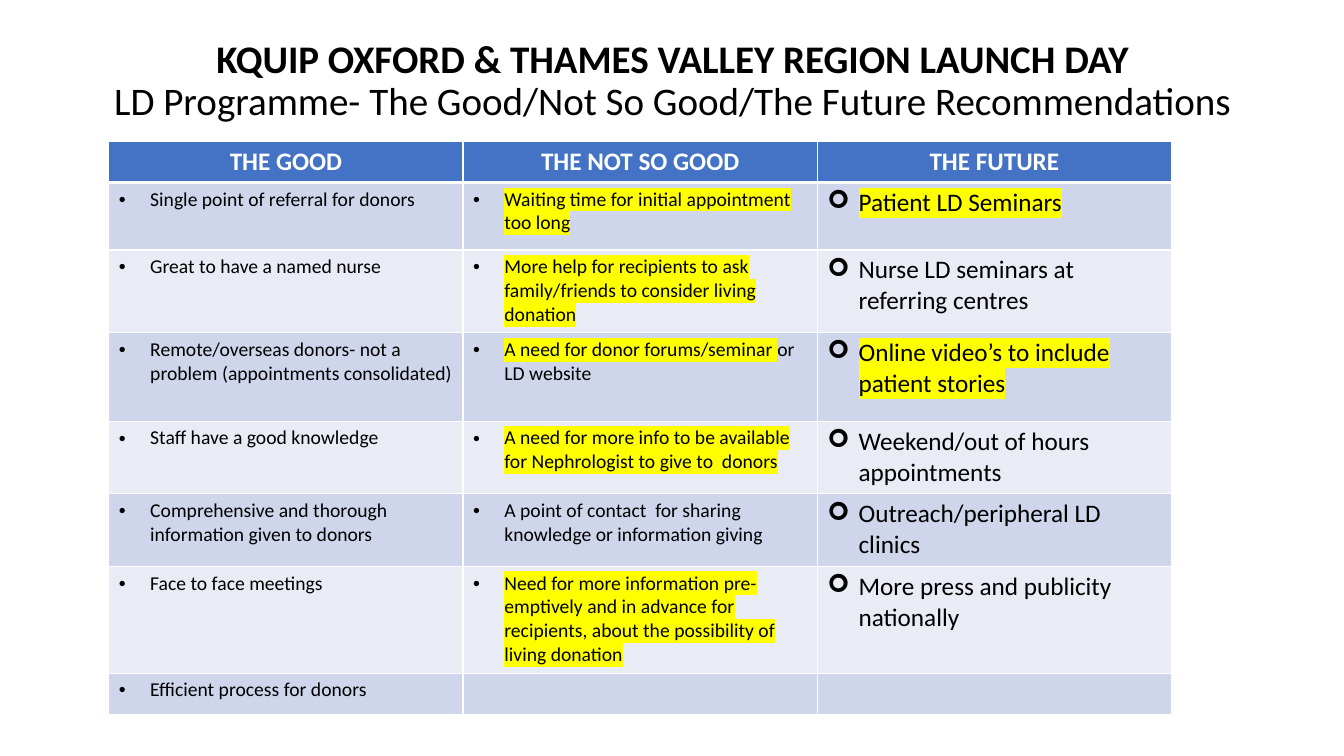
import pptx
import pptx.dml.color
import pptx.enum.text
import pptx.oxml
import pptx.oxml.ns
import pptx.util
from pptx.util import Inches

# Content: each table entry is (highlighted text, plain text)
HEADING = "KQUIP OXFORD & THAMES VALLEY REGION LAUNCH DAY"
SUBHEADING = "LD Programme- The Good/Not So Good/The Future Recommendations"
HEADERS = ["THE GOOD", "THE NOT SO GOOD", "THE FUTURE"]
GOOD = [
    ("", "Single point of referral for donors"),
    ("", "Great to have a named nurse"),
    ("", "Remote/overseas donors- not a problem (appointments consolidated)"),
    ("", "Staff have a good knowledge"),
    ("", "Comprehensive and thorough information given to donors"),
    ("", "Face to face meetings"),
    ("", "Efficient process for donors"),
]
NOT_SO_GOOD = [
    ("Waiting time for initial appointment too long", ""),
    ("More help for recipients to ask family/friends to consider living donation", ""),
    ("A need for donor forums/seminar ", "or LD website"),
    ("A need for more info to be available for Nephrologist to give to  donors", ""),
    ("", "A point of contact  for sharing knowledge or information giving"),
    ("Need for more information pre-emptively and in advance for recipients, "
     "about the possibility of living donation", ""),
]
FUTURE = [
    ("Patient LD Seminars", ""),
    ("", "Nurse LD seminars at referring centres"),
    ("Online video’s to include patient stories", ""),
    ("", "Weekend/out of hours appointments"),
    ("", "Outreach/peripheral LD clinics"),
    ("", "More press and publicity nationally"),
]
# Entries, text size, bullet sign, bullet font
COLUMNS = [
    (GOOD, 14, "•", "Arial"),
    (NOT_SO_GOOD, 14, "•", "Arial"),
    (FUTURE, 18, "➢", "Wingdings"),
]

# Format
COLORS = {"header": "4472C4", "odd": "CFD5EA", "even": "E9EBF5",
          "white": "FFFFFF", "black": "000000", "highlight": "FFFF00"}
FONT = "Calibri"
ROW_HEIGHTS = [0.41, 0.67, 0.82, 0.88, 0.72, 0.72, 1.06, 0.41]
TABLE_LEFT, TABLE_TOP, TABLE_WIDTH = 1.08, 1.4, 10.54
INDENT = Inches(0.31)
THIN, THICK = 1, 3


def rgb(name):
    return pptx.dml.color.RGBColor.from_string(COLORS[name])


def xml(body):
    tag, rest = body.split(" ", 1)
    return pptx.oxml.parse_xml(f"<a:{tag} {pptx.oxml.ns.nsdecls('a')} {rest}")


def add_run(paragraph, text, size, color="black", bold=False, highlighted=False):
    run = paragraph.add_run()
    run.text = text
    settings = {"size": pptx.util.Pt(size), "bold": bold, "name": FONT}
    for key, value in settings.items():
        setattr(run.font, key, value)
    run.font.color.rgb = rgb(color)
    if highlighted:
        fill = run.font._element.find(pptx.oxml.ns.qn("a:solidFill"))
        fill.addnext(xml(f'highlight ><a:srgbClr val="{COLORS["highlight"]}"/></a:highlight>'))


def add_bullet(paragraph, sign, font):
    properties = paragraph._p.get_or_add_pPr()
    properties.set("marL", str(INDENT))
    properties.set("indent", str(-INDENT))
    properties.append(xml(f'buFont typeface="{font}"/>'))
    properties.append(xml(f'buChar char="{sign}"/>'))


def style_cell(cell, fill, top, bottom):
    cell.fill.solid()
    cell.fill.fore_color.rgb = rgb(fill)
    properties = cell._tc.get_or_add_tcPr()
    borders = {"lnL": THIN, "lnR": THIN, "lnT": top, "lnB": bottom}
    for position, (side, width) in enumerate(borders.items()):
        properties.insert(position, xml(
            f'{side} w="{pptx.util.Pt(width)}"><a:solidFill>'
            f'<a:srgbClr val="{COLORS["white"]}"/></a:solidFill></a:{side}>'))


def main():
    deck = pptx.Presentation()
    deck.slide_width, deck.slide_height = Inches(13.33), Inches(7.5)
    slide = deck.slides.add_slide(deck.slide_layouts[5])
    center = pptx.enum.text.PP_ALIGN.CENTER

    # Title
    title = slide.shapes.title
    place = {"left": 0.92, "top": 0.4, "width": 11.5, "height": 0.82}
    for key, value in place.items():
        setattr(title, key, Inches(value))
    frame = title.text_frame
    frame.word_wrap = True
    frame.auto_size = pptx.enum.text.MSO_AUTO_SIZE.NONE
    frame.vertical_anchor = pptx.enum.text.MSO_ANCHOR.MIDDLE
    heading = frame.paragraphs[0]
    heading.alignment, heading.line_spacing = center, 0.9
    add_run(heading, HEADING, 27.9, bold=True)
    heading.add_line_break()
    add_run(heading, SUBHEADING, 27.9)

    # Table grid
    table = slide.shapes.add_table(
        len(ROW_HEIGHTS), len(COLUMNS), Inches(TABLE_LEFT), Inches(TABLE_TOP),
        Inches(TABLE_WIDTH), Inches(sum(ROW_HEIGHTS))).table
    for row, height in zip(table.rows, ROW_HEIGHTS):
        row.height = Inches(height)

    # Table columns: header, then bulleted entries
    for c, (header, (entries, size, sign, sign_font)) in enumerate(zip(HEADERS, COLUMNS)):
        table.columns[c].width = Inches(TABLE_WIDTH / len(COLUMNS))
        for r in range(len(ROW_HEIGHTS)):
            fill = "header" if r == 0 else "odd" if r % 2 else "even"
            style_cell(table.cell(r, c), fill,
                       THICK if r == 1 else THIN, THICK if r == 0 else THIN)
        header_line = table.cell(0, c).text_frame.paragraphs[0]
        header_line.alignment = center
        add_run(header_line, header, 18, "white", bold=True)
        for r, (marked, plain) in enumerate(entries, start=1):
            entry = table.cell(r, c).text_frame.paragraphs[0]
            add_bullet(entry, sign, sign_font)
            for text, highlighted in ((marked, True), (plain, False)):
                if text:
                    add_run(entry, text, size, highlighted=highlighted)

    deck.save("out.pptx")


if __name__ == "__main__":
    main()
